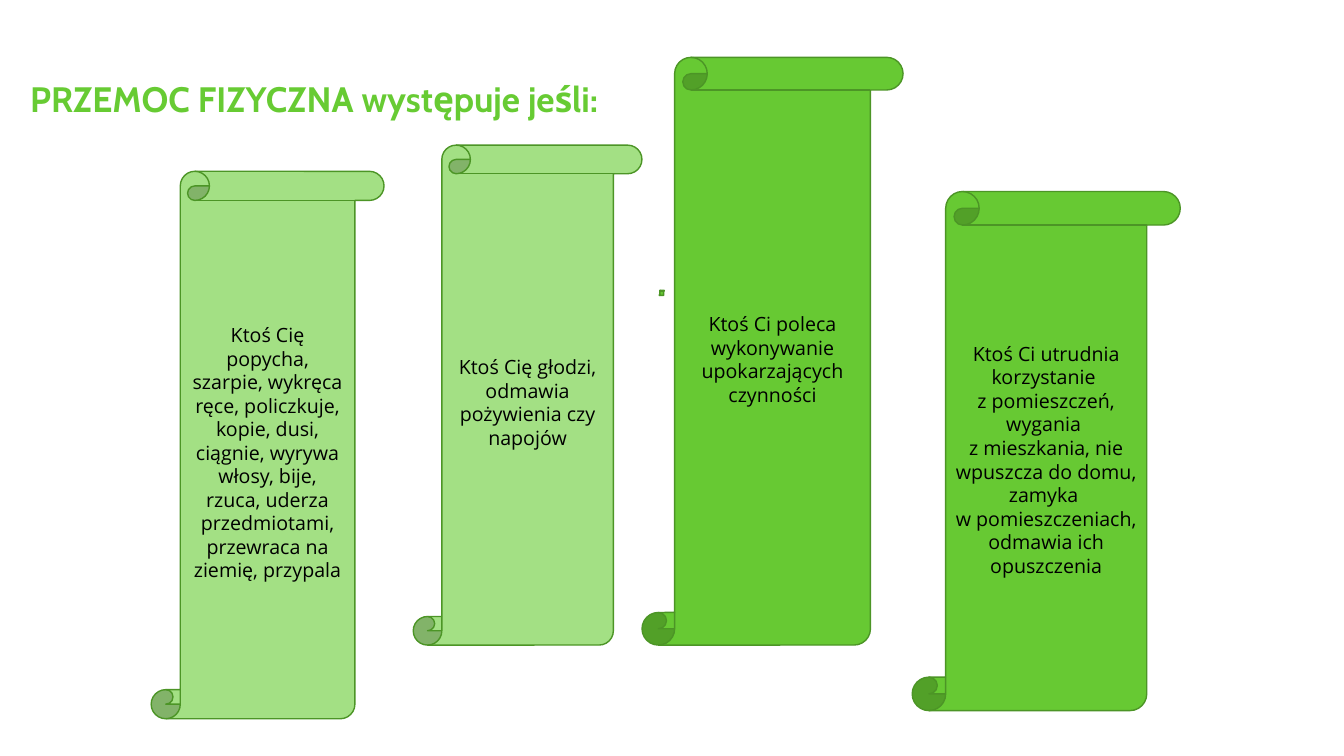
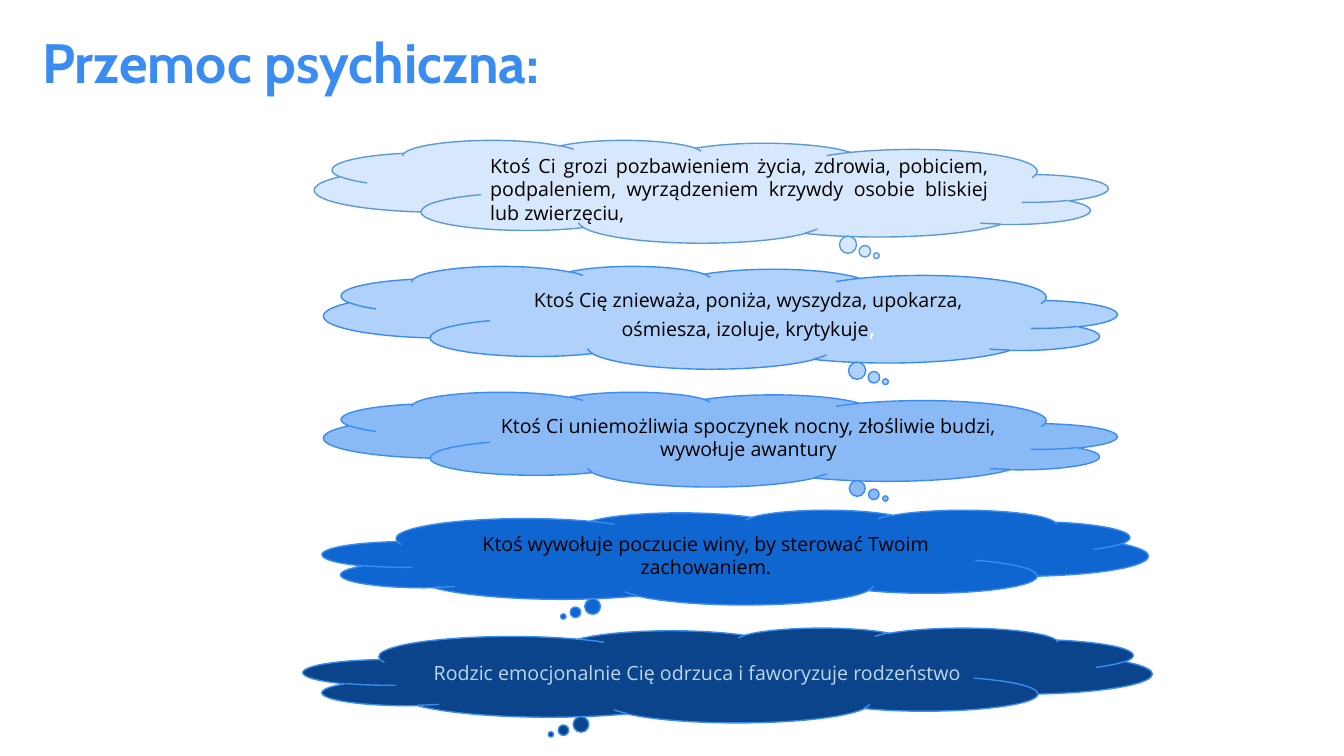
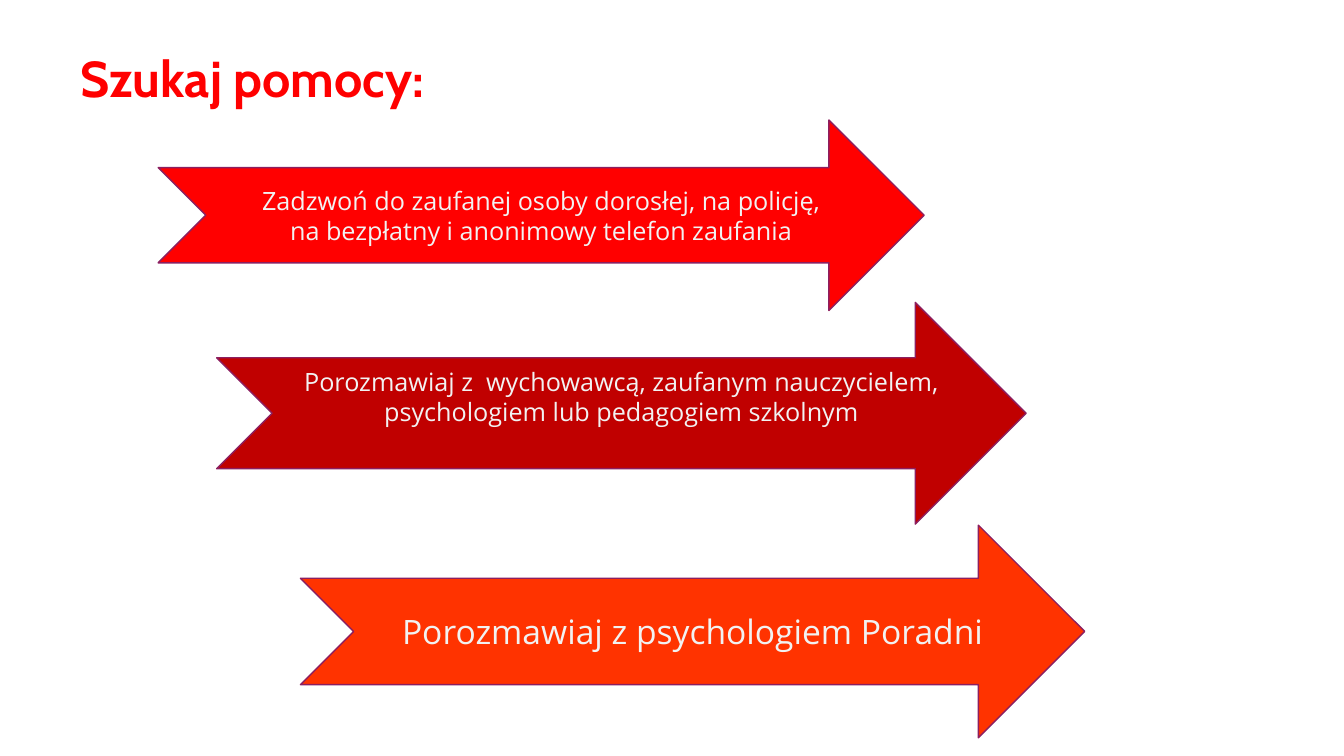
from pptx import Presentation
from pptx.dml.color import RGBColor
from pptx.enum.shapes import MSO_SHAPE
from pptx.enum.text import MSO_ANCHOR, PP_ALIGN
from pptx.oxml.ns import qn
from pptx.util import Pt

SCROLL = MSO_SHAPE.VERTICAL_SCROLL
CLOUD = MSO_SHAPE.CLOUD_CALLOUT
ARROW = MSO_SHAPE.NOTCHED_RIGHT_ARROW
CENTER, LEFT, JUSTIFY = PP_ALIGN.CENTER, PP_ALIGN.LEFT, PP_ALIGN.JUSTIFY
MIDDLE = MSO_ANCHOR.MIDDLE

TITLE_FONT, BODY_FONT = "Cabin", "Open Sans"
BLACK, WHITE, PALE_GRAY = "000000", "FFFFFF", "F2F2F2"
LIGHT_GREEN, GREEN, DARK_GREEN, TITLE_GREEN = "A3E084", "67C933", "4C9526", "67CB33"
BLUE, STEEL_BLUE, PALE_BLUE = "3A8CF0", "5B9BD5", "BDD7EE"
RED, PLUM = "FF0000", "8C1F60"
CLOUD_GAP = 16.56
INSET = 3.6

SCROLLS = [
    (108, 122.4, 166.3, 391, LIGHT_GREEN,
     "Ktoś Cię popycha, szarpie, wykręca ręce, policzkuje, kopie, dusi, ciągnie, "
     "wyrywa włosy, bije, rzuca, uderza przedmiotami, przewraca na ziemię, przypala"),
    (295.2, 103.7, 163.4, 357.1, LIGHT_GREEN,
     "Ktoś Cię głodzi, odmawia pożywienia czy napojów"),
    (470.9, 207.4, 3.6, 3.6, GREEN, ""),
    (458.6, 41, 186.5, 419.8, GREEN,
     "Ktoś Ci poleca wykonywanie upokarzających czynności"),
    (651.6, 136.8, 191.5, 370.8, GREEN,
     "Ktoś Ci utrudnia korzystanie \nz pomieszczeń, wygania \nz mieszkania, nie "
     "wpuszcza do domu, zamyka \nw pomieszczeniach, odmawia ich opuszczenia"),
]

CLOUDS = [
    (224.6, 566.6, 73.44, "D8E8FC", STEEL_BLUE, BLACK, JUSTIFY, True,
     "Ktoś Ci grozi pozbawieniem życia, zdrowia, pobiciem, podpaleniem, "
     "wyrządzeniem krzywdy osobie bliskiej lub zwierzęciu,"),
    (231.1, 566.6, 73.44, "B0D1F9", BLUE, BLACK, CENTER, True,
     "Ktoś Cię znieważa, poniża, wyszydza, upokarza, ośmiesza, izoluje, krytykuje"),
    (231.1, 566.6, 67.68, "89BAF6", BLUE, BLACK, CENTER, True,
     "Ktoś Ci uniemożliwia spoczynek nocny, złośliwie budzi, wywołuje awantury"),
    (230.4, 589.7, 67.68, "1066D0", BLUE, BLACK, CENTER, False,
     "Ktoś wywołuje poczucie winy, by sterować Twoim zachowaniem."),
    (216.7, 606.2, 67.68, "0B448A", BLUE, PALE_BLUE, CENTER, False,
     "Rodzic emocjonalnie Cię odrzuca i faworyzuje rodzeństwo"),
]

ARROWS = [
    (113, 85.7, 547.2, 136.1, RED, 18, INSET,
     "Zadzwoń do zaufanej osoby dorosłej, na policję,\n"
     "na bezpłatny i anonimowy telefon zaufania"),
    (154.8, 216, 578.2, 158.4, "C00000", 18, 28,
     "Porozmawiaj z  wychowawcą, zaufanym nauczycielem, "
     "psychologiem lub pedagogiem szkolnym"),
    (214.6, 375.1, 560.2, 151.9, "FF3300", 24, INSET,
     "Porozmawiaj z psychologiem Poradni"),
]


def rgb(color):
    """Turn a hex string into a colour."""
    return RGBColor.from_string(color)


def add_run(paragraph, text, size, color, font=BODY_FONT, bold=False):
    """Append one formatted run to a paragraph."""
    run = paragraph.add_run()
    run.text = text
    run.font.name, run.font.size, run.font.bold = font, Pt(size), bold
    run.font.color.rgb = rgb(color)


def write_text(shape, text, align=CENTER, bottom=INSET, spacing=1.0, **style):
    """Fill a shape with one wrapped paragraph, centred vertically."""
    frame = shape.text_frame
    frame.word_wrap = True
    frame.vertical_anchor = MIDDLE
    frame.margin_bottom = Pt(bottom)
    paragraph = frame.paragraphs[0]
    paragraph.alignment = align
    paragraph.line_spacing = spacing
    for index, line in enumerate(text.split("\n")):
        if index:
            paragraph.add_line_break()
        add_run(paragraph, line, **style)
    return paragraph


def add_title(slide, text, box, size, color, bottom=INSET):
    """Add the bold slide title."""
    shape = slide.shapes.add_textbox(*map(Pt, box))
    write_text(shape, text, align=LEFT, bottom=bottom, spacing=0.9,
               size=size, color=color, font=TITLE_FONT, bold=True)


def add_figure(slide, kind, box, fill, line):
    """Add a filled and outlined preset shape."""
    shape = slide.shapes.add_shape(kind, *map(Pt, box))
    shape.shadow.inherit = False
    shape.fill.solid()
    shape.fill.fore_color.rgb = rgb(fill)
    shape.line.color.rgb = rgb(line)
    shape.line.width = Pt(1)
    return shape


def turn_over(shape):
    """Mirror a shape sideways by a half turn and a vertical flip."""
    shape.rotation = 180
    shape.element.spPr.find(qn("a:xfrm")).set("flipV", "1")


def build_physical(slide):
    """Build the slide of scrolls."""
    add_title(slide, "PRZEMOC FIZYCZNA występuje jeśli:",
              (14.4, 41, 450.7, 90), 25.2, TITLE_GREEN, bottom=31)
    for *box, fill, text in SCROLLS:
        shape = add_figure(slide, SCROLL, box, fill, DARK_GREEN)
        if text:
            write_text(shape, text, size=14, color=BLACK)


def build_psychological(slide):
    """Build the slide of stacked thought clouds."""
    add_title(slide, "Przemoc psychiczna:", (23, 29.5, 415.4, 78.5), 39.6, BLUE, bottom=47)
    top = 100
    paragraphs = []
    for left, width, height, fill, line, color, align, turned, text in CLOUDS:
        shape = add_figure(slide, CLOUD, (left, top, width, height), fill, line)
        if turned:
            turn_over(shape)
        paragraphs.append(write_text(shape, text, align=align, size=14, color=color))
        top += height + CLOUD_GAP
    add_run(paragraphs[1], ",", 18, WHITE)


def build_help(slide):
    """Build the slide of arrows."""
    add_title(slide, "Szukaj pomocy:", (50.4, 21.6, 772.6, 72.7), 36, RED)
    for *box, fill, size, bottom, text in ARROWS:
        shape = add_figure(slide, ARROW, box, fill, PLUM)
        write_text(shape, text, bottom=bottom, size=size, color=PALE_GRAY)


def main():
    """Build and save the presentation."""
    presentation = Presentation()
    presentation.slide_width, presentation.slide_height = Pt(960), Pt(540)
    blank = presentation.slide_layouts[6]
    for build in (build_physical, build_psychological, build_help):
        build(presentation.slides.add_slide(blank))
    presentation.save("out.pptx")


if __name__ == "__main__":
    main()
